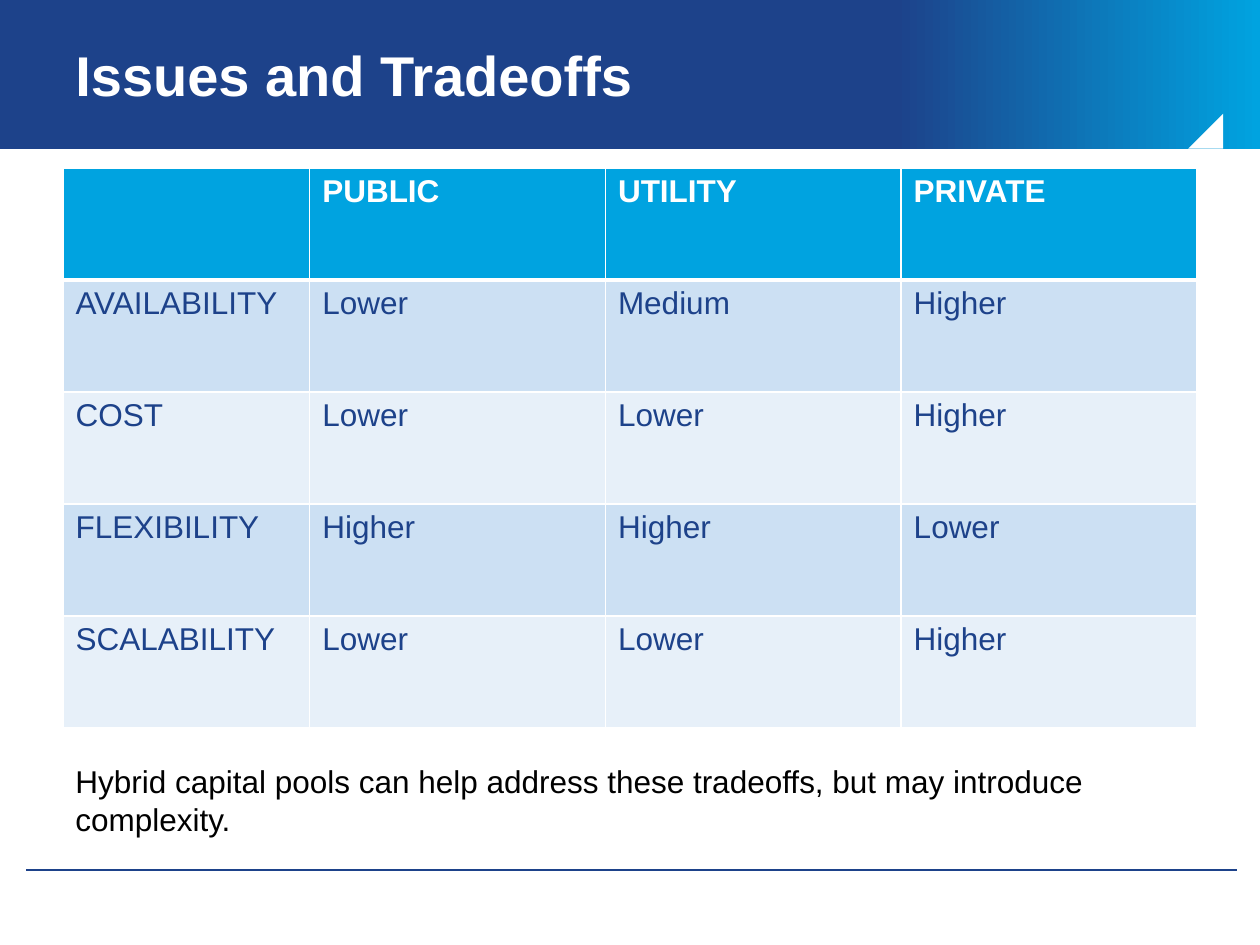
from lxml.etree import SubElement
from pptx import Presentation
from pptx.dml.color import RGBColor
from pptx.enum.shapes import MSO_CONNECTOR, MSO_SHAPE
from pptx.enum.text import MSO_ANCHOR
from pptx.oxml.ns import qn
from pptx.util import Pt

TITLE = "Issues and Tradeoffs"
ROWS = [
    ("", "PUBLIC", "UTILITY", "PRIVATE"),
    ("AVAILABILITY", "Lower", "Medium", "Higher"),
    ("COST", "Lower", "Lower", "Higher"),
    ("FLEXIBILITY", "Higher", "Higher", "Lower"),
    ("SCALABILITY", "Lower", "Lower", "Higher"),
]
NOTE = "Hybrid capital pools can help address these tradeoffs, but may introduce complexity."
NAVY, SKY, WHITE, BLACK = "1D428A", "00A3E0", "FFFFFF", "000000"
BANDS = ["CCE0F3", "E7F0F9"]
WIDTH, HEIGHT, BANNER_H = 720, 540, 85
LEFT, TABLE_TOP, TABLE_W = 36, 96, 648
LABEL_W, ROW_H = 141, 64
NOTCH = 20


def rgb(value):
    return RGBColor.from_string(value)


def set_font(p, size, color, bold=False):
    p.font.name = "Arial"
    p.font.size = Pt(size)
    p.font.bold = bold
    p.font.color.rgb = rgb(color)


def add_text(s, box, text, size, color, bold=False, anchor=MSO_ANCHOR.TOP):
    tf = s.shapes.add_textbox(*map(Pt, box)).text_frame
    tf.word_wrap = True
    tf.vertical_anchor = anchor
    tf.text = text
    set_font(tf.paragraphs[0], size, color, bold)


def add_borders(cell, bottom):
    tc_pr = cell._tc.get_or_add_tcPr()
    for side, width in (("L", 1), ("R", 1), ("T", 1), ("B", bottom)):
        ln = SubElement(tc_pr, qn(f"a:ln{side}"), w=str(Pt(width)))
        fill = SubElement(ln, qn("a:solidFill"))
        SubElement(fill, qn("a:srgbClr"), val=WHITE)


def add_banner(s):
    sp = s.shapes.add_shape(MSO_SHAPE.RECTANGLE, 0, 0, Pt(WIDTH), Pt(BANNER_H))
    sp.shadow.inherit = False
    sp.line.fill.background()
    sp.fill.gradient()
    sp.fill.gradient_angle = 0
    for stop, (position, color) in zip(sp.fill.gradient_stops, ((0.71, NAVY), (1, SKY))):
        stop.position = position
        stop.color.rgb = rgb(color)

    notch = s.shapes.add_shape(MSO_SHAPE.RIGHT_TRIANGLE, Pt(679), Pt(BANNER_H - NOTCH),
                               Pt(NOTCH), Pt(NOTCH))
    notch.shadow.inherit = False
    notch.line.fill.background()
    notch.fill.solid()
    notch.fill.fore_color.rgb = rgb(WHITE)
    notch._element.spPr.find(qn("a:xfrm")).set("flipH", "1")


def add_rule(s):
    rule = s.shapes.add_connector(MSO_CONNECTOR.STRAIGHT, Pt(15), Pt(497), Pt(707), Pt(497))
    rule.line.color.rgb = rgb(NAVY)
    rule.line.width = Pt(1)
    SubElement(rule._element.spPr, qn("a:effectLst"))


def add_tradeoffs(s):
    n_cols = len(ROWS[0])
    table = s.shapes.add_table(len(ROWS), n_cols, Pt(LEFT), Pt(TABLE_TOP),
                               Pt(TABLE_W), Pt(ROW_H * len(ROWS))).table
    for c, col in enumerate(table.columns):
        col.width = Pt((TABLE_W - LABEL_W) / (n_cols - 1) if c else LABEL_W)
    for r, values in enumerate(ROWS):
        table.rows[r].height = Pt(ROW_H)
        header = r == 0
        for c, value in enumerate(values):
            cell = table.cell(r, c)
            cell.text = value
            set_font(cell.text_frame.paragraphs[0], 18, WHITE if header else NAVY, header)
            add_borders(cell, 3 if header else 1)
            cell.fill.solid()
            cell.fill.fore_color.rgb = rgb(SKY if header else BANDS[(r - 1) % 2])


def main():
    prs = Presentation()
    prs.slide_width, prs.slide_height = Pt(WIDTH), Pt(HEIGHT)
    s = prs.slides.add_slide(prs.slide_layouts[6])
    add_banner(s)
    add_rule(s)
    add_text(s, (LEFT, 0, 598, BANNER_H), TITLE, 32, WHITE, True, MSO_ANCHOR.MIDDLE)
    add_tradeoffs(s)
    add_text(s, (LEFT, 432, TABLE_W, 29), NOTE, 18, BLACK)
    prs.save("out.pptx")


if __name__ == "__main__":
    main()
